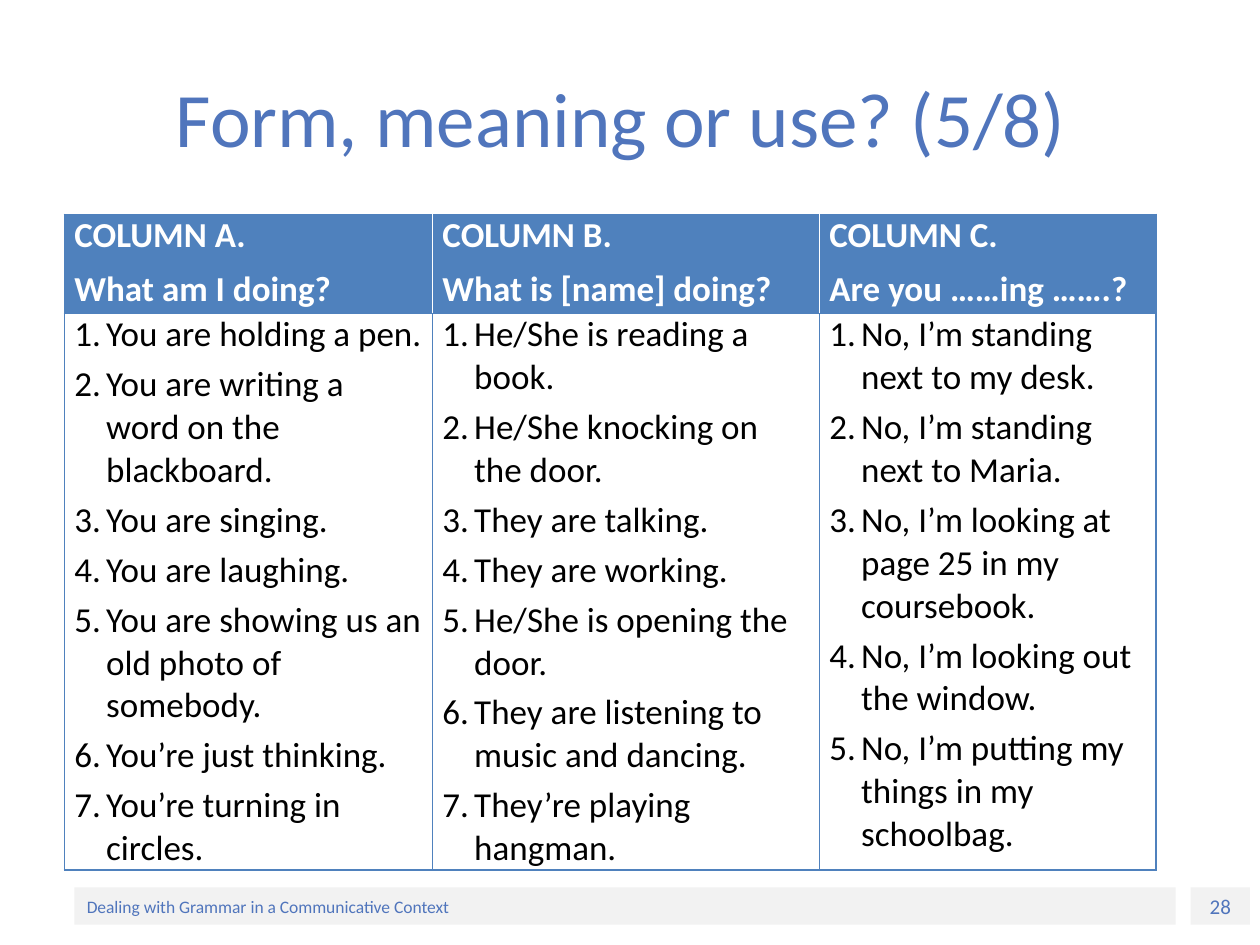
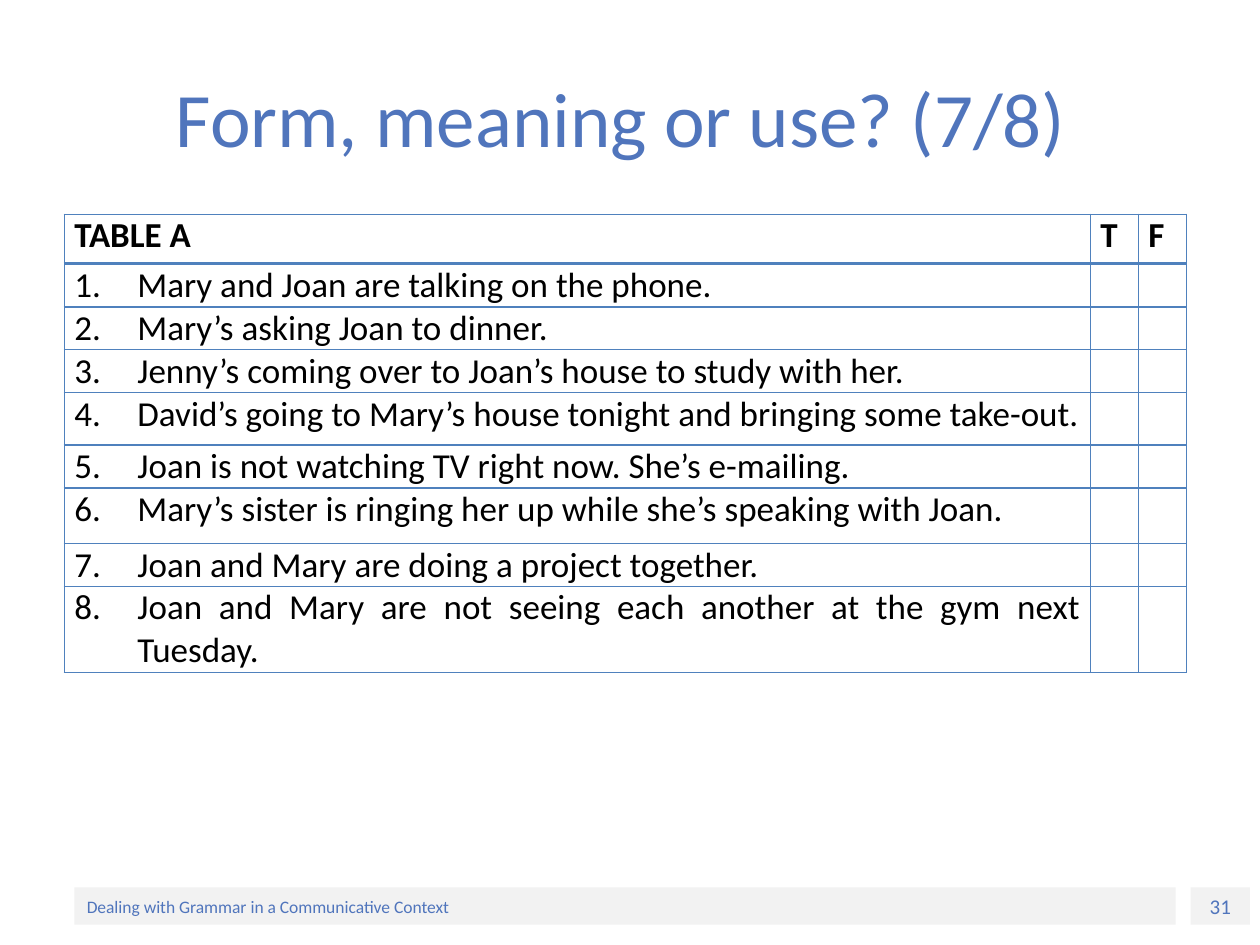
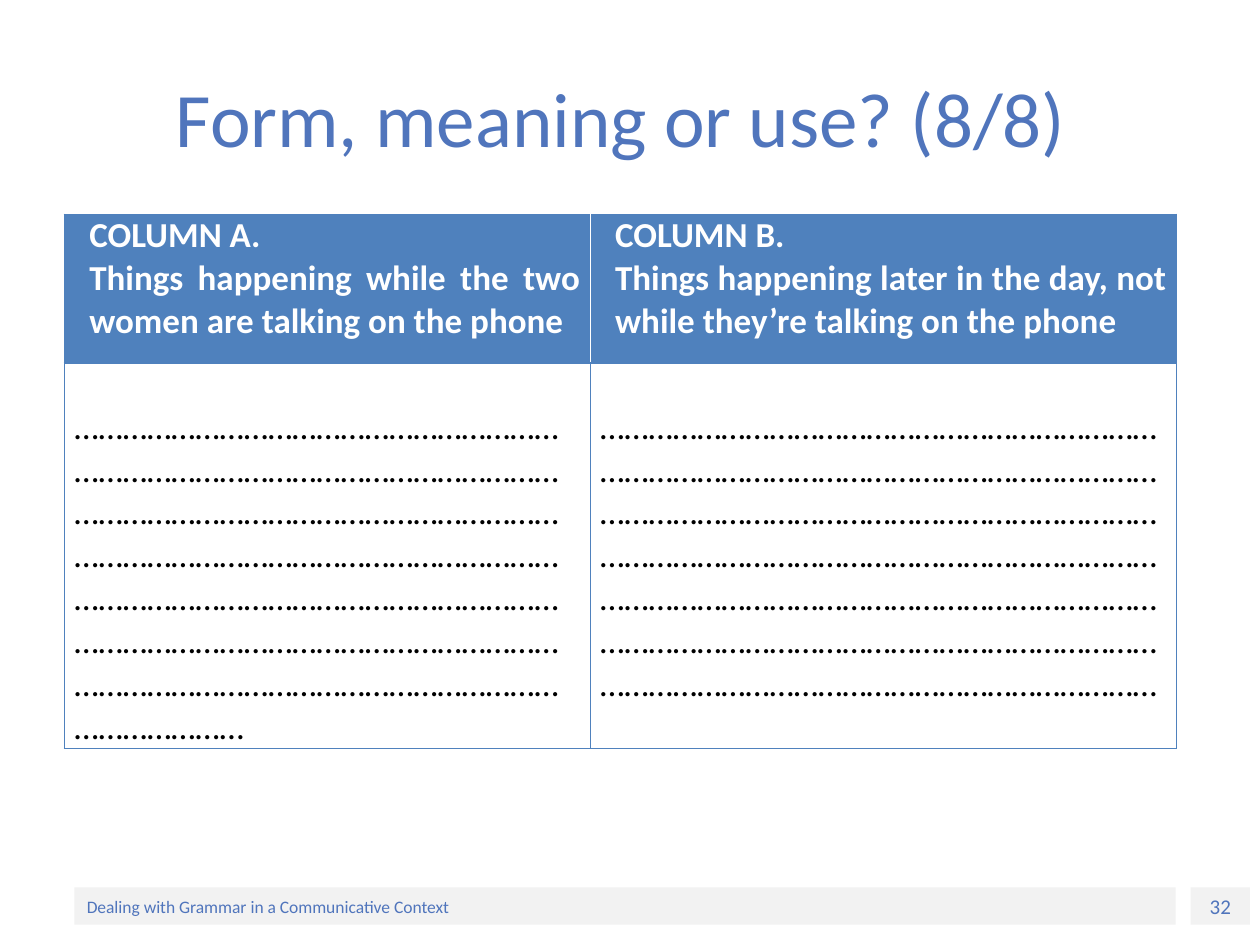
"""Build three grammar slides, each with a title, a table and a footer band."""
import pptx
import pptx.dml.color
import pptx.enum.shapes
import pptx.enum.text
import pptx.oxml
import pptx.oxml.ns
import pptx.util

Cm, Pt = pptx.util.Cm, pptx.util.Pt
ALIGN = pptx.enum.text.PP_ALIGN
FONT = "Calibri"
INK, BAND, GRID, WHITE, BLACK = "5075BC", "F2F2F2", "4F81BD", "FFFFFF", "000000"
TITLE = "Form, meaning or use? ({}/8) "
FOOTER = "Dealing with Grammar in a Communicative Context"

FACTS = [
    "Mary and Joan are talking on the phone.",
    "Mary’s asking Joan to dinner.",
    "Jenny’s coming over to Joan’s house to study with her.",
    "David’s going to Mary’s house tonight and bringing some take-out.",
    "Joan is not watching TV right now. She’s e-mailing.",
    "Mary’s sister is ringing her up while she’s speaking with Joan.",
    "Joan and Mary are doing a project together.",
    "Joan and Mary are not seeing each another at the gym next Tuesday.",
]
ACTIONS = [
    ["You are holding a pen.", "You are writing a word on the blackboard.",
     "You are singing.", "You are laughing.",
     "You are showing us an old photo of somebody.",
     "You’re just thinking.", "You’re turning in circles."],
    ["He/She is reading a book.", "He/She knocking on the door.",
     "They are talking.", "They are working.", "He/She is opening the door.",
     "They are listening to music and dancing.", "They’re playing hangman."],
    ["No, I’m standing next to my desk.", "No, I’m standing next to Maria.",
     "No, I’m looking at page 25 in my coursebook.",
     "No, I’m looking out the window.",
     "No, I’m putting my things in my schoolbag."],
]
SLIDES = [
    dict(part=5, page=28, cols=[7.42, 7.8, 6.78], rows=[2, 10.5],
         head=[["COLUMN A.", "What am I doing?"],
               ["COLUMN B.", "What is [name] doing?"],
               ["COLUMN C.", "Are you ……ing …….?"]],
         body=[ACTIONS], solid=True, align=ALIGN.LEFT,
         top=dict(before=6), item=dict(before=2, after=2, hang=0.64)),
    dict(part=7, page=31, cols=[20.68, 0.97, 0.97],
         rows=[1, 0.84, 0.84, 0.84, 1.06, 0.84, 1.12, 0.84, 1.7],
         head=[["TABLE A "], ["T"], ["F"]],
         body=[[[fact], [], []] for fact in FACTS],
         solid=False, align=ALIGN.JUSTIFY,
         top=dict(after=6), item=dict(hang=1.27)),
    dict(part=8, page=32, cols=[10.6, 11.82], rows=[3, 7.75],
         head=[["COLUMN A.",
                "Things happening while the two women are talking on the phone"],
               ["COLUMN B.", "Things happening later in the day, "
                "not while they’re talking on the phone"]],
         body=[[["…" * 147], ["…" * 161]]], solid=True, align=ALIGN.JUSTIFY,
         top=dict(left=0.3), item={}, drop=0.86),
]


def color(text):
    return pptx.dml.color.RGBColor.from_string(text)


def style(para, size, ink, bold=False):
    for run in para.runs:
        font = run.font
        font.name, font.size, font.bold = FONT, Pt(size), bold
        font.color.rgb = color(ink)


def border(cell, **sides):
    props = cell._tc.get_or_add_tcPr()
    for side, (ink, width) in sides.items():
        props.append(pptx.oxml.parse_xml(
            f'<a:ln{side} {pptx.oxml.ns.nsdecls("a")} w="{Pt(width)}">'
            f'<a:solidFill><a:srgbClr val="{ink}"/></a:solidFill></a:ln{side}>'))


def number(para, hang, start):
    props = para._p.get_or_add_pPr()
    props.set("marL", str(Cm(hang)))
    props.set("indent", str(-Cm(hang)))
    props.append(pptx.oxml.parse_xml(
        f'<a:buAutoNum {pptx.oxml.ns.nsdecls("a")} '
        f'type="arabicPeriod" startAt="{start}"/>'))


def write(cell, lines, align, ink, bold, start=1,
          before=0, after=0, hang=0, left=0):
    frame = cell.text_frame
    frame.text = "\n".join(lines)
    for i, para in enumerate(frame.paragraphs):
        para.alignment = align
        para.space_before = Pt(before if i else 0)
        para.space_after = Pt(after)
        if left:
            para._p.get_or_add_pPr().set("marL", str(Cm(left)))
        if hang and lines:
            number(para, hang, start)
        style(para, 20, ink, bold)


def grid(slide, data):
    cols, rows = data["cols"], data["rows"]
    table = slide.shapes.add_table(
        len(rows), len(cols), Cm(1.3), Cm(4.32),
        Cm(sum(cols)), Cm(sum(rows))).table
    table.first_row = table.horz_banding = False
    for col, width in zip(table.columns, cols):
        col.width = Cm(width)
    for row, height in zip(table.rows, rows):
        row.height = Cm(height)
    solid, last = data["solid"], len(cols) - 1
    rule = (GRID, 1 if solid else 2)
    for r, line in enumerate([data["head"]] + data["body"]):
        head = r == 0
        inner = (WHITE if head and solid else GRID, 1)
        for c, lines in enumerate(line):
            cell = table.cell(r, c)
            cell.margin_left = cell.margin_right = Cm(0.2)
            cell.margin_top = Cm(0 if head else data.get("drop", 0))
            cell.margin_bottom = 0
            border(cell, L=inner if c else (GRID, 1),
                   R=inner if c < last else (GRID, 1),
                   T=rule if r == 1 else (GRID, 1),
                   B=rule if head else (GRID, 1))
            if head and solid:
                cell.fill.solid()
                cell.fill.fore_color.rgb = color(GRID)
            else:
                cell.fill.background()
            write(cell, lines, data["align"], WHITE if head and solid else BLACK,
                  head, max(r, 1), **data["top" if head else "item"])


def band(slide, left, width, text, size, align):
    box = slide.shapes.add_shape(
        pptx.enum.shapes.MSO_SHAPE.RECTANGLE,
        Cm(left), Cm(17.89), Cm(width), Cm(0.75))
    box.shadow.inherit = False
    box.fill.solid()
    box.fill.fore_color.rgb = color(BAND)
    box.line.fill.background()
    frame = box.text_frame
    frame.text = text
    frame.vertical_anchor = pptx.enum.text.MSO_ANCHOR.MIDDLE
    para = frame.paragraphs[0]
    para.alignment = align
    style(para, size, INK)


def build(deck, data):
    slide = deck.slides.add_slide(deck.slide_layouts[5])
    band(slide, 24, 1.2, str(data["page"]), 12, ALIGN.CENTER)
    band(slide, 1.5, 22.2, FOOTER, 10, ALIGN.LEFT)
    title = slide.shapes.title
    title.left, title.top = Cm(1.27), Cm(0.76)
    title.width, title.height = Cm(22.86), Cm(3.18)
    frame = title.text_frame
    frame.text = TITLE.format(data["part"])
    frame.vertical_anchor = pptx.enum.text.MSO_ANCHOR.MIDDLE
    frame.paragraphs[0].alignment = ALIGN.CENTER
    style(frame.paragraphs[0], 44, INK)
    grid(slide, data)


def main():
    deck = pptx.Presentation()
    deck.slide_width, deck.slide_height = Cm(25.4), Cm(19.05)
    for data in SLIDES:
        build(deck, data)
    deck.save("out.pptx")


if __name__ == "__main__":
    main()
